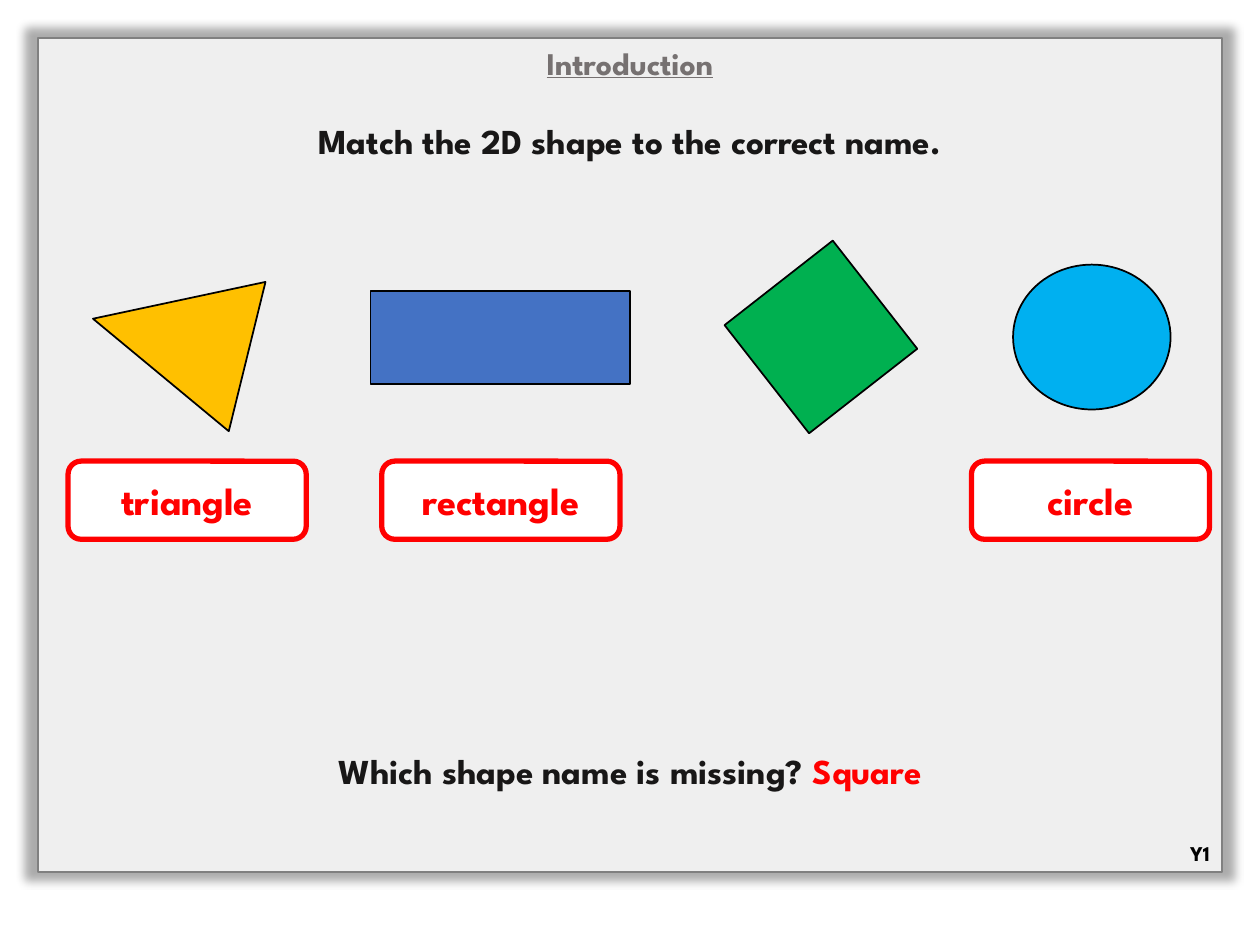
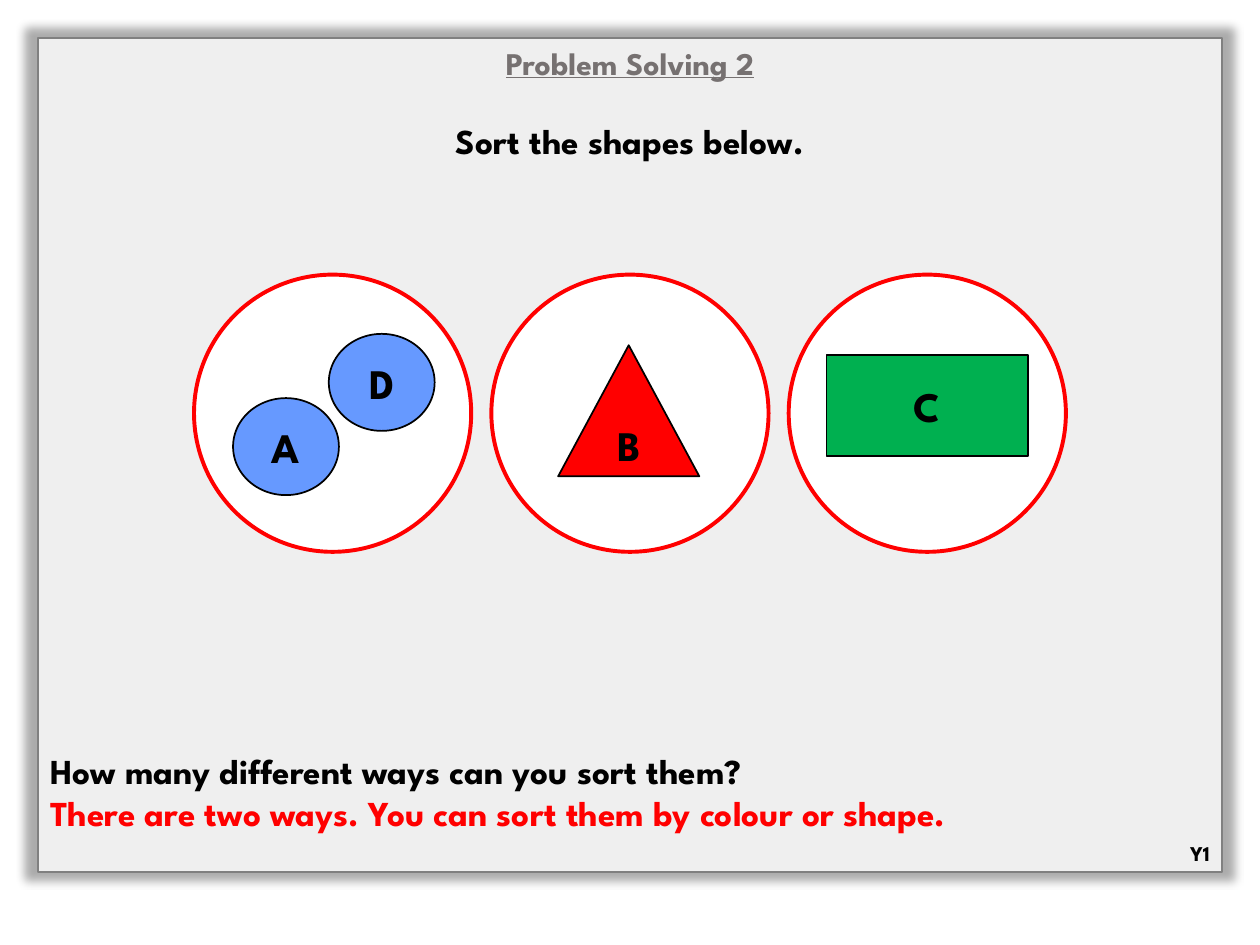
"""Build two maths slides about naming and sorting 2D shapes."""
from lxml import etree
from pptx import Presentation
from pptx import util as u
from pptx.dml.color import RGBColor
from pptx.enum import shapes, text
from pptx.oxml import ns

SCALE = u.Inches(1) // 100
FONT = "League Spartan"
BLACK, WHITE, RED, GREEN = "000000", "FFFFFF", "FF0000", "00B050"
GREY, INK, BORDER = "767171", "181717", "808080"
AMBER, BLUE, SKY, PALE_BLUE = "FFC000", "4472C4", "00B0F0", "6699FF"
PANEL = (30, 30, 940, 662)
KIND = shapes.MSO_SHAPE
ALIGN = text.PP_ALIGN
ANCHOR = text.MSO_ANCHOR


def px(*lengths):
    """Turn lengths in px into EMU."""
    return [length * SCALE for length in lengths]


def colour(code):
    """Turn a hex string into a colour."""
    return RGBColor.from_string(code)


def write(shape, lines, size=20, ink=BLACK, underline=False,
          align=ALIGN.CENTER, anchor=ANCHOR.MIDDLE, inset=5):
    """Write lines, each a list of (wording, colour or None), into a shape."""
    frame = shape.text_frame
    frame.word_wrap = True
    frame.auto_size = text.MSO_AUTO_SIZE.NONE
    frame.vertical_anchor = anchor
    frame.margin_left, frame.margin_right = px(10, 10)
    frame.margin_top, frame.margin_bottom = px(inset, inset)
    for number, line in enumerate(lines):
        paragraph = frame.add_paragraph() if number else frame.paragraphs[0]
        paragraph.alignment = align
        for wording, run_ink in line:
            run = paragraph.add_run()
            run.text = wording
            run.font.name = FONT
            run.font.size = u.Pt(size)
            run.font.bold = True
            run.font.underline = underline
            run.font.color.rgb = colour(run_ink or ink)


def add_figure(parent, kind, box, fill, line=BLACK, weight=1, turn=0):
    """Add a filled, outlined shape to a slide or group."""
    figure = parent.shapes.add_shape(kind, *px(*box))
    figure.shadow.inherit = False
    figure.fill.solid()
    figure.fill.fore_color.rgb = colour(fill)
    figure.line.color.rgb = colour(line)
    figure.line.width = u.Pt(weight)
    figure.rotation = turn
    return figure


def add_note(slide, box, lines, **style):
    """Add a text box with top-anchored writing."""
    note = slide.shapes.add_textbox(*px(*box))
    write(note, lines, anchor=ANCHOR.TOP, **style)


def add_panel(slide):
    """Add the translucent panel with its soft glow behind the title."""
    panel = add_figure(slide, KIND.RECTANGLE, PANEL, WHITE, BORDER)
    properties = panel._element.spPr
    fill = properties.find(ns.qn("a:solidFill")).find(ns.qn("a:srgbClr"))
    etree.SubElement(fill, ns.qn("a:alpha"), val="82000")
    glow = etree.SubElement(
        properties.find(ns.qn("a:effectLst")), ns.qn("a:outerShdw"),
        blurRad=str(u.Pt(5)), sx="102000", sy="102000", algn="ctr",
        rotWithShape="0")
    tint = etree.SubElement(glow, ns.qn("a:srgbClr"), val=BLACK)
    etree.SubElement(tint, ns.qn("a:alpha"), val="40000")
    slide.shapes.title._element.addprevious(panel._element)


def add_page(deck, heading, prompt, prompt_ink):
    """Add a slide with panel, heading, prompt and year mark."""
    slide = deck.slides.add_slide(deck.slide_layouts[5])
    add_panel(slide)
    title = slide.shapes.title
    title.left, title.top, title.width, title.height = px(30, 30, 940, 40)
    write(title, [[(heading, GREY)]], size=18, underline=True,
          anchor=ANCHOR.TOP)
    add_note(slide, (30, 95, 940, 34), [[(prompt, prompt_ink)]], inset=0)
    add_note(slide, (925, 662, 45, 30), [[("Y1", None)]], size=12,
             align=ALIGN.RIGHT)
    return slide


def add_matching(deck):
    """Add the slide that matches shapes to names."""
    slide = add_page(deck, "Introduction",
                     "Match the 2D shape to the correct name.", INK)
    for kind, box, fill, turn in (
            (KIND.ISOSCELES_TRIANGLE, (74, 205, 122, 126), AMBER, 283.8),
            (KIND.RECTANGLE, (294, 231, 206, 74), BLUE, 0),
            (KIND.RECTANGLE, (597, 213, 109, 109), GREEN, 52),
            (KIND.OVAL, (804, 210, 125, 115), SKY, 0)):
        add_figure(slide, kind, box, fill, turn=turn)
    for name, left in (("triangle", 54), ("rectangle", 303), ("circle", 771)):
        label = add_figure(slide, KIND.ROUNDED_RECTANGLE,
                           (left, 366, 189, 62), WHITE, RED, 3)
        write(label, [[(name, RED)]], size=22)
    add_note(slide, (30, 595, 940, 34),
             [[("Which shape name is missing? ", INK), ("Square", RED)]],
             inset=0)


def add_sorting(deck):
    """Add the slide that sorts lettered shapes into rings."""
    slide = add_page(deck, "Problem Solving 2", "Sort the shapes below.", BLACK)
    rings = slide.shapes.add_group_shape()
    for column in range(3):
        add_figure(rings, KIND.OVAL, (154 + 236 * column, 218, 220, 220),
                   WHITE, RED, 2.25)
    for letter, kind, box, fill, anchor in (
            ("C", KIND.RECTANGLE, (656, 282, 160, 80), GREEN, ANCHOR.MIDDLE),
            ("B", KIND.ISOSCELES_TRIANGLE, (443, 274, 112, 104), RED,
             ANCHOR.BOTTOM),
            ("D", KIND.OVAL, (261, 265, 84, 77), PALE_BLUE, ANCHOR.MIDDLE),
            ("A", KIND.OVAL, (185, 316, 84, 77), PALE_BLUE, ANCHOR.MIDDLE)):
        figure = add_figure(slide, kind, box, fill)
        write(figure, [[(letter, None)]], size=24, anchor=anchor)
    add_note(slide, (30, 595, 940, 67), [
        [("How many different ways can you sort them?", None)],
        [("There are two ways. You can sort them by colour or shape.", RED)],
    ], align=ALIGN.LEFT, inset=0)


def main():
    """Build and save the deck."""
    deck = Presentation()
    deck.slide_width, deck.slide_height = px(1000, 750)
    add_matching(deck)
    add_sorting(deck)
    deck.save("out.pptx")


if __name__ == "__main__":
    main()
